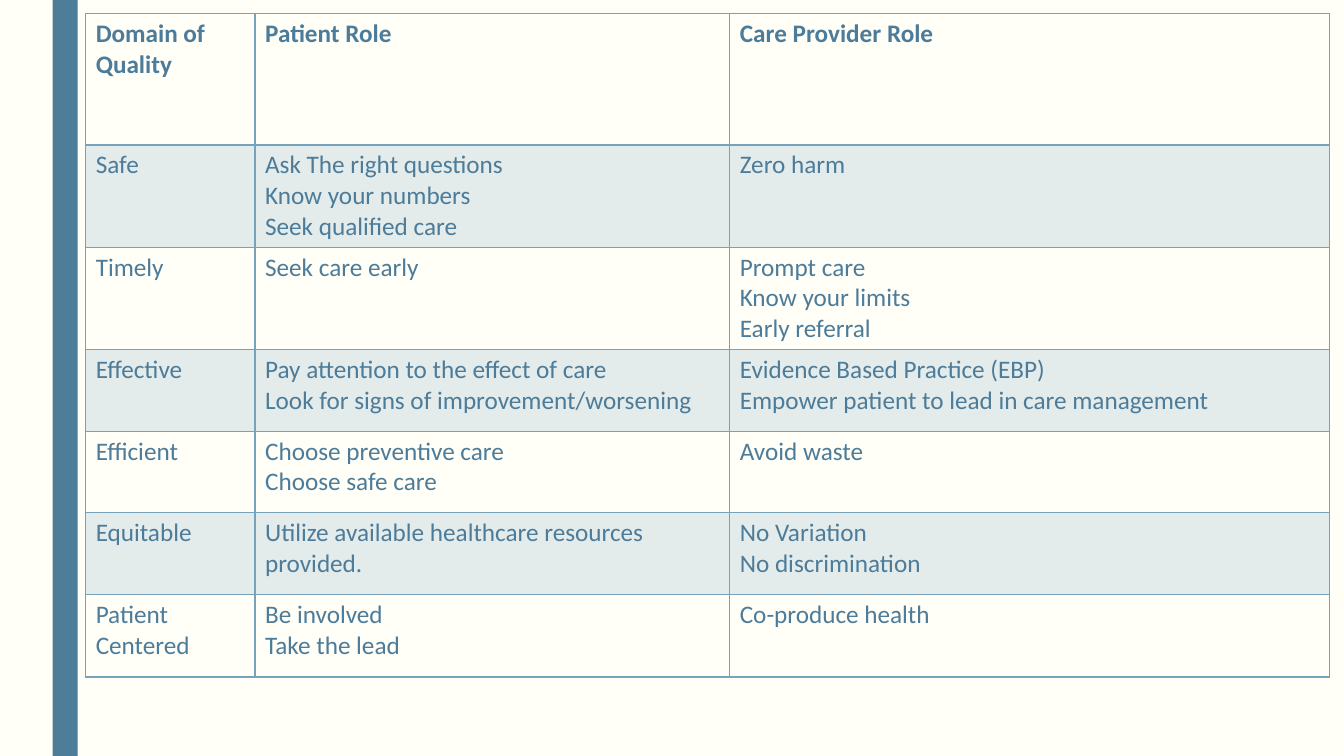
from dataclasses import dataclass

import pptx
import pptx.dml.color
import pptx.enum.shapes
import pptx.oxml
import pptx.oxml.ns
import pptx.util
from pptx.util import Pt


@dataclass(frozen=True)
class Theme:
    """Colours, font and sizes of the slide."""
    background: str = "FFFEF7"
    bar: str = "4D7D99"
    text: str = "4C7C99"
    accent: str = "77A2BB"
    band_opacity: int = 20
    font: str = "Calibri"
    size: int = 18
    border: int = 1
    header_border: int = 2


THEME = Theme()
COLUMN_WIDTHS = [121, 339.1, 428.4]
ROW_HEIGHTS = [93.6, 72, 72, 58.3, 58.3, 58.3, 59]
QUALITY_ROLES = [
    ("Domain of Quality", "Patient Role", "Care Provider Role"),
    ("Safe", "Ask The right questions\nKnow your numbers\nSeek qualified care", "Zero harm"),
    ("Timely", "Seek care early", "Prompt care\nKnow your limits\nEarly referral"),
    ("Effective",
     "Pay attention to the effect of care\nLook for signs of improvement/worsening",
     "Evidence Based Practice (EBP)\nEmpower patient to lead in care management"),
    ("Efficient", "Choose preventive care\nChoose safe care", "Avoid waste"),
    ("Equitable", "Utilize available healthcare resources provided.",
     "No Variation\nNo discrimination"),
    ("Patient Centered", "Be involved\nTake the lead", "Co-produce health"),
]


def rgb(colour):
    """Turn a hex string into a colour."""
    return pptx.dml.color.RGBColor.from_string(colour)


def paint(fill, colour):
    """Give a fill one solid colour."""
    fill.solid()
    fill.fore_color.rgb = rgb(colour)


def add_side_bar(slide, height):
    """Draw the vertical bar at the left edge."""
    bar = slide.shapes.add_shape(
        pptx.enum.shapes.MSO_SHAPE.RECTANGLE, Pt(37.5), 0, Pt(18), height)
    bar.shadow.inherit = False
    paint(bar.fill, THEME.bar)
    bar.line.fill.background()


def set_borders(cell, top, bottom):
    """Draw the four borders of a cell, with the given top and bottom widths."""
    properties = cell._tc.get_or_add_tcPr()
    widths = {"L": THEME.border, "R": THEME.border, "T": top, "B": bottom}
    for side, width in widths.items():
        properties.append(pptx.oxml.parse_xml(
            f'<a:ln{side} {pptx.oxml.ns.nsdecls("a")} w="{Pt(width)}">'
            f'<a:solidFill><a:srgbClr val="{THEME.accent}"/></a:solidFill></a:ln{side}>'))


def set_band(cell, banded):
    """Tint a banded cell and leave the others clear."""
    if not banded:
        cell.fill.background()
        return
    paint(cell.fill, THEME.accent)
    tint = cell._tc.tcPr.find(pptx.oxml.ns.qn("a:solidFill"))[0]
    tint.append(pptx.oxml.parse_xml(
        f'<a:alpha {pptx.oxml.ns.nsdecls("a")} val="{THEME.band_opacity * 1000}"/>'))


def write_cell(cell, text, bold):
    """Write the lines of a cell as paragraphs."""
    cell.text = text
    for paragraph in cell.text_frame.paragraphs:
        paragraph.font.name = THEME.font
        paragraph.font.size = Pt(THEME.size)
        paragraph.font.bold = bold
        paragraph.font.color.rgb = rgb(THEME.text)


def add_roles_table(slide):
    """Add the table of patient and provider roles by quality domain."""
    roles = slide.shapes.add_table(
        len(ROW_HEIGHTS), len(COLUMN_WIDTHS), Pt(61.2), Pt(9.8),
        Pt(sum(COLUMN_WIDTHS)), Pt(sum(ROW_HEIGHTS))).table
    roles.horz_banding = False
    for column, width in zip(roles.columns, COLUMN_WIDTHS):
        column.width = Pt(width)
    for index, (row, height, texts) in enumerate(zip(roles.rows, ROW_HEIGHTS, QUALITY_ROLES)):
        row.height = Pt(height)
        top = THEME.header_border if index == 1 else THEME.border
        bottom = THEME.header_border if index == 0 else THEME.border
        for cell, text in zip(row.cells, texts):
            write_cell(cell, text, bold=index == 0)
            set_borders(cell, top, bottom)
            set_band(cell, banded=index % 2 == 1)


def main():
    """Build the slide and save it."""
    deck = pptx.Presentation()
    deck.slide_width, deck.slide_height = Pt(960), Pt(540)
    slide = deck.slides.add_slide(deck.slide_layouts[6])
    paint(slide.background.fill, THEME.background)
    add_side_bar(slide, deck.slide_height)
    add_roles_table(slide)
    deck.save("out.pptx")


if __name__ == "__main__":
    main()
